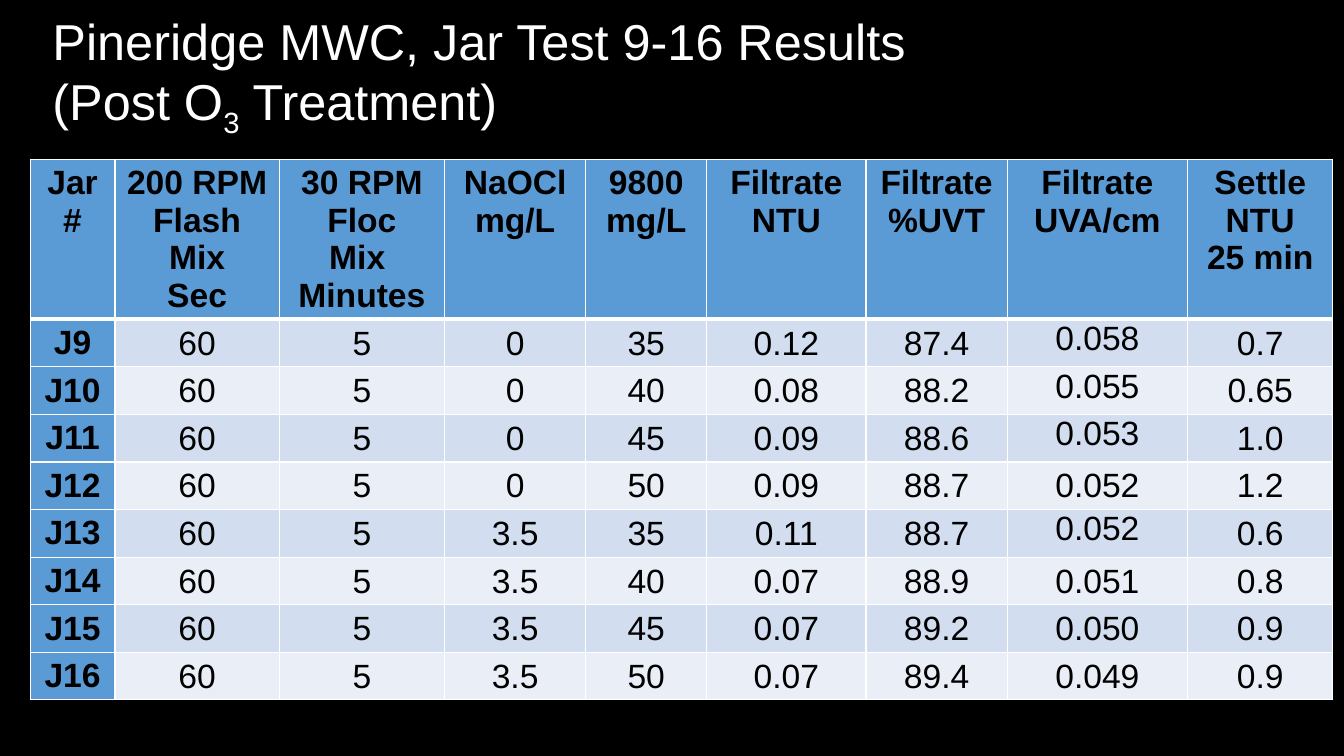
from copy import deepcopy

from lxml import etree
from pptx import Presentation
from pptx.dml.color import RGBColor
from pptx.enum import text
from pptx.oxml import ns
from pptx.util import Inches, Pt

BLACK = RGBColor(0x00, 0x00, 0x00)
WHITE = RGBColor(0xFF, 0xFF, 0xFF)
BLUE = RGBColor(0x5B, 0x9B, 0xD5)
BANDS = [RGBColor(0xD2, 0xDE, 0xEF), RGBColor(0xEA, 0xEF, 0xF7)]

TITLE_PARTS = [
    ("Pineridge MWC, Jar Test 9-16 Results\v(Post O", 0),
    ("3", -25000),
    (" Treatment)", 0),
]
HEADERS = [
    "Jar\v#", "200 RPM\nFlash\nMix\nSec", "30 RPM\nFloc\nMix \nMinutes",
    "NaOCl\nmg/L", "9800\nmg/L", "Filtrate\nNTU", "Filtrate\n%UVT",
    "Filtrate\nUVA/cm", "Settle\nNTU\n25 min",
]
JARS = [
    ("J9", "60", "5", "0", "35", "0.12", "87.4", "0.058", "0.7"),
    ("J10", "60", "5", "0", "40", "0.08", "88.2", "0.055", "0.65"),
    ("J11", "60", "5", "0", "45", "0.09", "88.6", "0.053", "1.0"),
    ("J12", "60", "5", "0", "50", "0.09", "88.7", "0.052", "1.2"),
    ("J13", "60", "5", "3.5", "35", "0.11", "88.7", "0.052", "0.6"),
    ("J14", "60", "5", "3.5", "40", "0.07", "88.9", "0.051", "0.8"),
    ("J15", "60", "5", "3.5", "45", "0.07", "89.2", "0.050", "0.9"),
    ("J16", "60", "5", "3.5", "50", "0.07", "89.4", "0.049", "0.9"),
]
COLUMN_WIDTHS = [0.84, 1.63, 1.64, 1.4, 1.2, 1.58, 1.4, 1.79, 1.44]
ROW_HEIGHT = 0.41
UVA_COLUMN = 7
TOP_ANCHORED_JARS = {"J9", "J10", "J11", "J13"}

TITLE_BOX = dict(left=Inches(0.42), top=Inches(0.11), width=Inches(11.99), height=Inches(1.27))
TABLE_BOX = dict(left=Inches(0.3), top=Inches(1.58), width=Inches(12.92), height=Inches(5.7))
TITLE_FRAME = dict(vertical_anchor=text.MSO_ANCHOR.MIDDLE, word_wrap=True,
                   auto_size=text.MSO_AUTO_SIZE.NONE)
TITLE_PARAGRAPH = dict(alignment=text.PP_ALIGN.LEFT, line_spacing=0.9)
TITLE_FONT = dict(name="Arial", size=Pt(36), bold=False)
CELL_FONT = dict(name="Arial", size=Pt(24))
VALUE_MARGINS = dict(margin_left=Inches(0.01), margin_right=Inches(0.01),
                     margin_top=Inches(0.01), margin_bottom=0)


def apply(target, values):
    for name, value in values.items():
        setattr(target, name, value)


def format_runs(paragraph, values, color):
    for run in paragraph.runs:
        apply(run.font, values)
        run.font.color.rgb = color
    for line_break in paragraph._p.findall(ns.qn("a:br")):
        line_break.append(deepcopy(paragraph.runs[0].font._element))


def add_borders(cell, widths):
    properties = cell._tc.get_or_add_tcPr()
    for side, width in widths.items():
        line = etree.SubElement(properties, ns.qn(f"a:ln{side}"), w=str(Pt(width)))
        fill = etree.SubElement(line, ns.qn("a:solidFill"))
        etree.SubElement(fill, ns.qn("a:srgbClr"), val=str(WHITE))


def add_title(slide):
    title = slide.shapes.title
    apply(title, TITLE_BOX)
    apply(title.text_frame, TITLE_FRAME)
    paragraph = title.text_frame.paragraphs[0]
    apply(paragraph, TITLE_PARAGRAPH)
    first, *others = TITLE_PARTS
    paragraph.text = first[0]
    for words, baseline in others:
        run = paragraph.add_run()
        run.text = words
        if baseline:
            run.font._element.set("baseline", str(baseline))
    format_runs(paragraph, TITLE_FONT, WHITE)


def fill_cell(cell, words, row, column):
    is_heading = row == 0 or column == 0
    cell.text_frame.text = words
    for paragraph in cell.text_frame.paragraphs:
        paragraph.alignment = text.PP_ALIGN.CENTER
        format_runs(paragraph, dict(CELL_FONT, bold=is_heading), BLACK)
    add_borders(cell, {"L": 1, "R": 1, "T": 3 if row == 1 else 1, "B": 3 if row == 0 else 1})
    cell.fill.solid()
    cell.fill.fore_color.rgb = BLUE if is_heading else BANDS[(row - 1) % 2]
    if not is_heading:
        apply(cell, VALUE_MARGINS)
        at_top = column == UVA_COLUMN and JARS[row - 1][0] in TOP_ANCHORED_JARS
        cell.vertical_anchor = text.MSO_ANCHOR.TOP if at_top else text.MSO_ANCHOR.MIDDLE


def add_results(slide):
    rows = [HEADERS, *JARS]
    frame = slide.shapes.add_table(len(rows), len(HEADERS), **TABLE_BOX)
    table = frame.table
    table.first_col = True
    for column, width in zip(table.columns, COLUMN_WIDTHS):
        column.width = Inches(width)
    for row in table.rows:
        row.height = Inches(ROW_HEIGHT)
    apply(frame, TABLE_BOX)
    for row, values in enumerate(rows):
        for column, words in enumerate(values):
            fill_cell(table.cell(row, column), words, row, column)


def main():
    presentation = Presentation()
    presentation.slide_width = Inches(13.33)
    presentation.slide_height = Inches(7.5)
    slide = presentation.slides.add_slide(presentation.slide_layouts[5])
    slide.background.fill.solid()
    slide.background.fill.fore_color.rgb = BLACK
    add_title(slide)
    add_results(slide)
    presentation.save("out.pptx")


if __name__ == "__main__":
    main()
